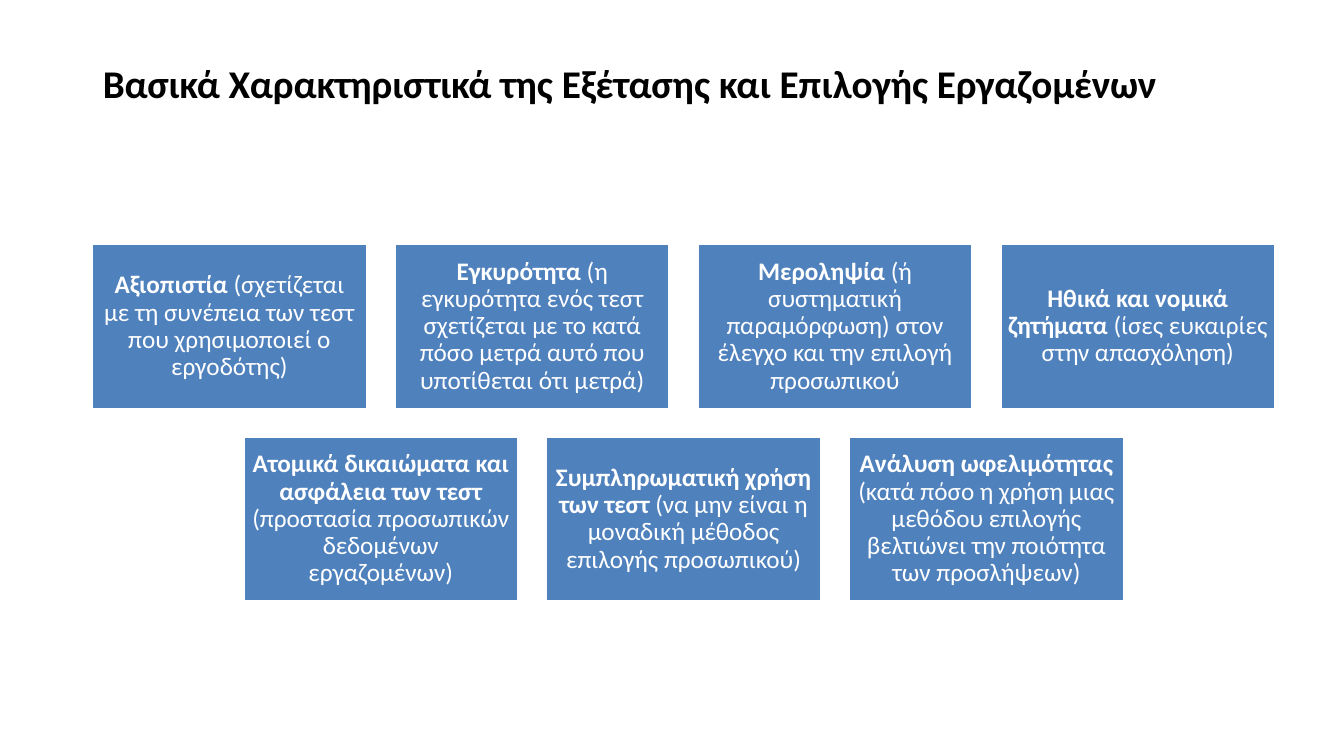
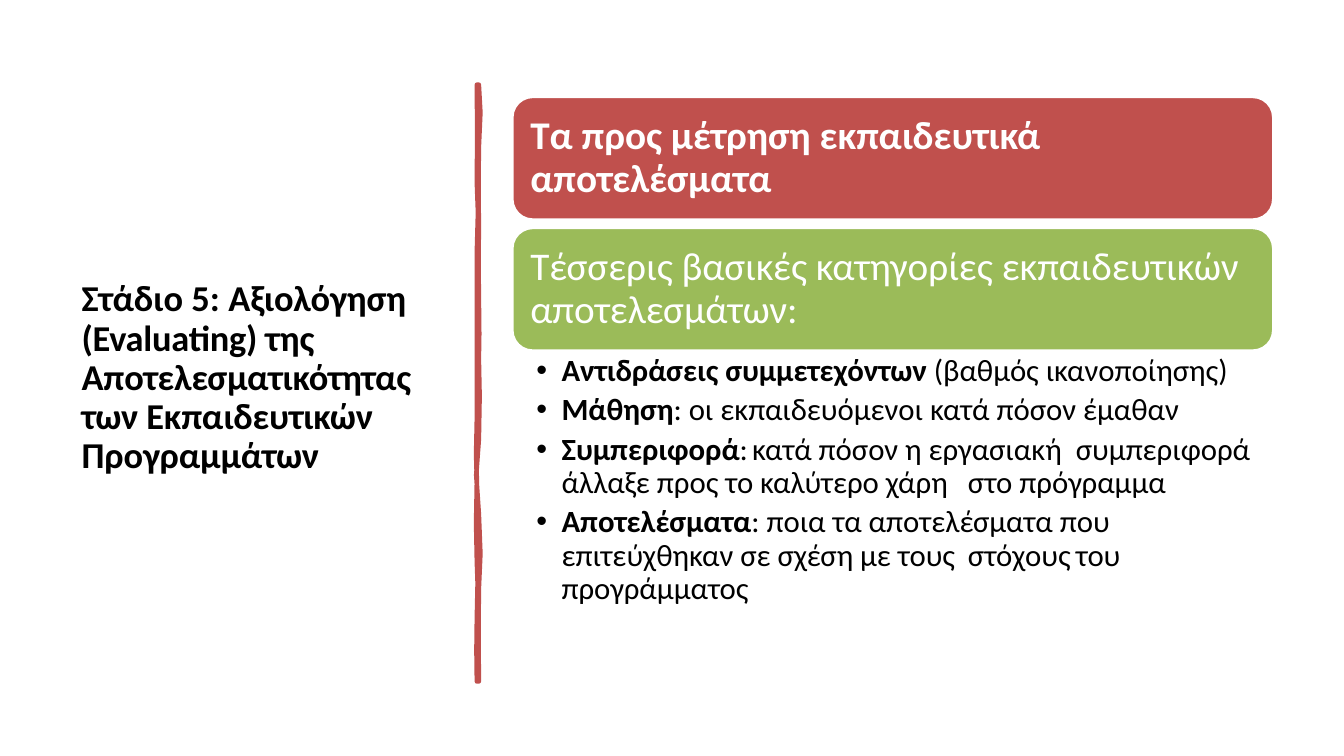
from lxml import etree
from pptx import Presentation
from pptx.dml.color import RGBColor
from pptx.enum.shapes import MSO_SHAPE
from pptx.enum.text import MSO_ANCHOR, PP_ALIGN
from pptx.oxml.ns import qn
from pptx.util import Inches, Pt

RECT, ROUNDED = MSO_SHAPE.RECTANGLE, MSO_SHAPE.ROUNDED_RECTANGLE
TOP, MIDDLE = MSO_ANCHOR.TOP, MSO_ANCHOR.MIDDLE
LEFT, CENTER = PP_ALIGN.LEFT, PP_ALIGN.CENTER

FONT = "Calibri"
COLORS = {"blue": "4F81BD", "red": "C0504D", "green": "9BBB59",
          "white": "FFFFFF", "black": "000000"}

CHARACTERISTICS_TITLE = [("Βασικά Χαρακτηριστικά ", -10),
                         ("της Εξέτασης και Επιλογής ", 0),
                         ("Εργαζομένων", -10)]
CHARACTERISTICS = [
    [("Αξιοπιστία ", "(σχετίζεται με τη συνέπεια των τεστ που χρησιμοποιεί ο εργοδότης)"),
     ("Εγκυρότητα ", "(η εγκυρότητα ενός τεστ σχετίζεται με το κατά πόσο μετρά αυτό που "
                     "υποτίθεται ότι μετρά)"),
     ("Μεροληψία ", "(ή συστηματική παραμόρφωση) στον έλεγχο και την επιλογή προσωπικού"),
     ("Ηθικά και νομικά ζητήματα ", "(ίσες ευκαιρίες στην απασχόληση)")],
    [("Ατομικά δικαιώματα και ασφάλεια των τεστ ",
      "(προστασία προσωπικών δεδομένων εργαζομένων)"),
     ("Συμπληρωματική χρήση των τεστ ",
      "(να μην είναι η μοναδική μέθοδος επιλογής προσωπικού)"),
     ("Ανάλυση ωφελιμότητας ",
      "(κατά πόσο η χρήση μιας μεθόδου επιλογής βελτιώνει την ποιότητα των προσλήψεων)")],
]

STAGE_TITLE = [("Στάδιο 5: ", 0), ("Αξιολόγηση ", -10), ("(Evaluating) ", -20),
               ("της ", 0), ("Αποτελεσματικότητας των ", -20),
               ("Εκπαιδευτικών Προγραμμάτων", -10)]
BANDS = [("Τα προς μέτρηση εκπαιδευτικά αποτελέσματα", "red", True),
         ("Τέσσερις βασικές κατηγορίες εκπαιδευτικών αποτελεσμάτων:", "green", False)]
OUTCOMES = [
    ("Αντιδράσεις συμμετεχόντων ", "(βαθμός ικανοποίησης)"),
    ("Μάθηση", ": οι εκπαιδευόμενοι κατά πόσον έμαθαν"),
    ("Συμπεριφορά", ":\tκατά πόσον η εργασιακή\tσυμπεριφορά άλλαξε προς το καλύτερο "
                    "χάρη\tστο πρόγραμμα"),
    ("Αποτελέσματα", ": ποια τα αποτελέσματα που επιτεύχθηκαν σε σχέση\tμε τους\t"
                     "στόχους\tτου προγράμματος"),
]

STROKE_START = (4.75, 0.84)
STROKE_CURVES = [
    ((4.77, 1.02), (4.77, 1.19), (4.75, 1.46)),
    ((4.73, 1.73), (4.76, 1.95), (4.75, 2.26)),
    ((4.74, 2.57), (4.75, 2.62), (4.75, 2.94)),
    ((4.74, 3.25), (4.77, 3.42), (4.75, 3.56)),
    ((4.73, 3.7), (4.79, 4.14), (4.75, 4.36)),
    ((4.71, 4.57), (4.72, 4.84), (4.75, 5.1)),
    ((4.77, 5.36), (4.77, 5.64), (4.75, 5.84)),
    ((4.73, 6.03), (4.76, 6.5), (4.75, 6.76)),
    ((4.74, 6.76), (4.73, 6.76), (4.73, 6.76)),
    ((4.74, 6.46), (4.71, 6.44), (4.73, 6.13)),
    ((4.74, 5.83), (4.74, 5.7), (4.73, 5.57)),
    ((4.72, 5.44), (4.72, 4.95), (4.73, 4.77)),
    ((4.73, 4.59), (4.71, 4.45), (4.73, 4.15)),
    ((4.74, 3.86), (4.72, 3.73), (4.73, 3.35)),
    ((4.74, 2.98), (4.72, 2.81), (4.73, 2.5)),
    ((4.74, 2.18), (4.75, 2), (4.73, 1.81)),
    ((4.7, 1.63), (4.77, 1.04), (4.73, 0.84)),
]


def rgb(name):
    """Return the named colour."""
    return RGBColor.from_string(COLORS[name])


def paint(shape, fill, outline, weight):
    """Give a shape a flat fill and outline without shadow."""
    shape.shadow.inherit = False
    shape.fill.solid()
    shape.fill.fore_color.rgb = rgb(fill)
    shape.line.color.rgb = rgb(outline)
    shape.line.width = Pt(weight)


def set_frame(frame, insets, anchor):
    """Wrap a text frame and set its left, top, right and bottom insets."""
    frame.word_wrap = True
    frame.vertical_anchor = anchor
    (frame.margin_left, frame.margin_top,
     frame.margin_right, frame.margin_bottom) = map(Inches, insets)


def add_run(paragraph, wording, size, color, bold, spacing=0):
    """Add one styled run, with letter spacing in hundredths of a point."""
    run = paragraph.add_run()
    run.text = wording
    run.font.name = FONT
    run.font.size = Pt(size)
    run.font.bold = bold
    run.font.color.rgb = rgb(color)
    if spacing:
        run.font._element.set("spc", str(spacing))


def add_title(slide, box, parts, size, insets, anchor, line_spacing):
    """Place a bold black title in its box."""
    frame = slide.shapes.add_textbox(*map(Inches, box)).text_frame
    set_frame(frame, insets, anchor)
    heading = frame.paragraphs[0]
    heading.line_spacing = line_spacing
    for wording, spacing in parts:
        add_run(heading, wording, size, "black", True, spacing)


def add_panel(slide, kind, box, fill, parts, size, inset, align):
    """Place a filled panel with white text made of (wording, bold) parts."""
    panel = slide.shapes.add_shape(kind, *map(Inches, box))
    paint(panel, fill, "white", 2)
    set_frame(panel.text_frame, [inset] * 4, MIDDLE)
    statement = panel.text_frame.paragraphs[0]
    statement.alignment = align
    statement.line_spacing = 0.9
    for wording, bold in parts:
        add_run(statement, wording, size, "white", bold)


def add_characteristics(slide, box, rows):
    """Lay out rows of 5:3 panels with gaps of a tenth, each row centred."""
    left, top, width = box
    longest = max(map(len, rows))
    panel_width = width / (longest + 0.1 * (longest - 1))
    panel_height, gap = 0.6 * panel_width, 0.1 * panel_width
    inset = 5.4 / 72
    for row_number, row in enumerate(rows):
        row_width = len(row) * (panel_width + gap) - gap
        start = left + (width - row_width) / 2
        for column, (term, detail) in enumerate(row):
            place = (start + column * (panel_width + gap),
                     top + row_number * (panel_height + gap),
                     panel_width, panel_height)
            add_panel(slide, RECT, place, "blue", [(term, True), (detail, False)],
                      18, inset, CENTER)


def curve_points(start, curves, steps=2):
    """Return points along a chain of cubic curves."""
    points = []
    for first, second, end in curves:
        for step in range(1, steps + 1):
            t = step / steps
            u = 1 - t
            points.append(tuple(
                Inches(u**3 * a + 3 * u * u * t * b + 3 * u * t * t * c + t**3 * d)
                for a, b, c, d in zip(start, first, second, end)))
        start = end
    return points


def add_divider(slide):
    """Draw the hand-drawn vertical stroke."""
    outline = slide.shapes.build_freeform(*map(Inches, STROKE_START))
    outline.add_line_segments(curve_points(STROKE_START, STROKE_CURVES), close=True)
    paint(outline.convert_to_shape(), "red", "red", 3.25)


def add_bands(slide, box, bands):
    """Stack rounded bands evenly in the box."""
    left, top, width, height = box
    band_height = 1.22
    step = (height - band_height) / (len(bands) - 1)
    for number, (wording, fill, bold) in enumerate(bands):
        add_panel(slide, ROUNDED, (left, top + number * step, width, band_height),
                  fill, [(wording, bold)], 28, 0.12, LEFT)


def add_outcomes(slide, box, outcomes):
    """List the outcomes as bullets with a bold term."""
    frame = slide.shapes.add_textbox(*map(Inches, box)).text_frame
    set_frame(frame, (0.24, 0.04, 0.22, 0.04), TOP)
    for number, (term, detail) in enumerate(outcomes):
        outcome = frame.add_paragraph() if number else frame.paragraphs[0]
        outcome.line_spacing = 0.9
        outcome.space_after = Pt(4.4)
        properties = outcome._p.get_or_add_pPr()
        properties.set("marL", str(Inches(0.25)))
        properties.set("indent", str(Inches(-0.25)))
        properties.set("defTabSz", str(Inches(1.07)))
        etree.SubElement(properties, qn("a:buFont")).set("typeface", "Arial")
        etree.SubElement(properties, qn("a:buChar")).set("char", "•")
        add_run(outcome, term, 22, "black", True)
        add_run(outcome, detail, 22, "black", False)


def characteristics_slide(slide):
    """Build the slide of selection characteristics."""
    add_title(slide, (1, 0.16, 11.33, 1.38), CHARACTERISTICS_TITLE, 28,
              (0.02, 0.43, 0, 0), TOP, 1.0)
    add_characteristics(slide, (0.91, 2.42, 11.74), CHARACTERISTICS)


def evaluation_slide(slide):
    """Build the slide of training evaluation."""
    add_title(slide, (0.69, 0.7, 3.74, 6.11), STAGE_TITLE, 26,
              (0.12, 0.05, 0.1, 0.05), MIDDLE, 0.9)
    add_divider(slide)
    add_bands(slide, (5.08, 0.96, 7.55, 2.52), BANDS)
    add_outcomes(slide, (5.08, 3.48, 7.55, 3.02), OUTCOMES)


def main():
    """Build and save the presentation."""
    deck = Presentation()
    deck.slide_width, deck.slide_height = Inches(13.33), Inches(7.5)
    for build in (characteristics_slide, evaluation_slide):
        build(deck.slides.add_slide(deck.slide_layouts[6]))
    deck.save("out.pptx")


if __name__ == "__main__":
    main()
